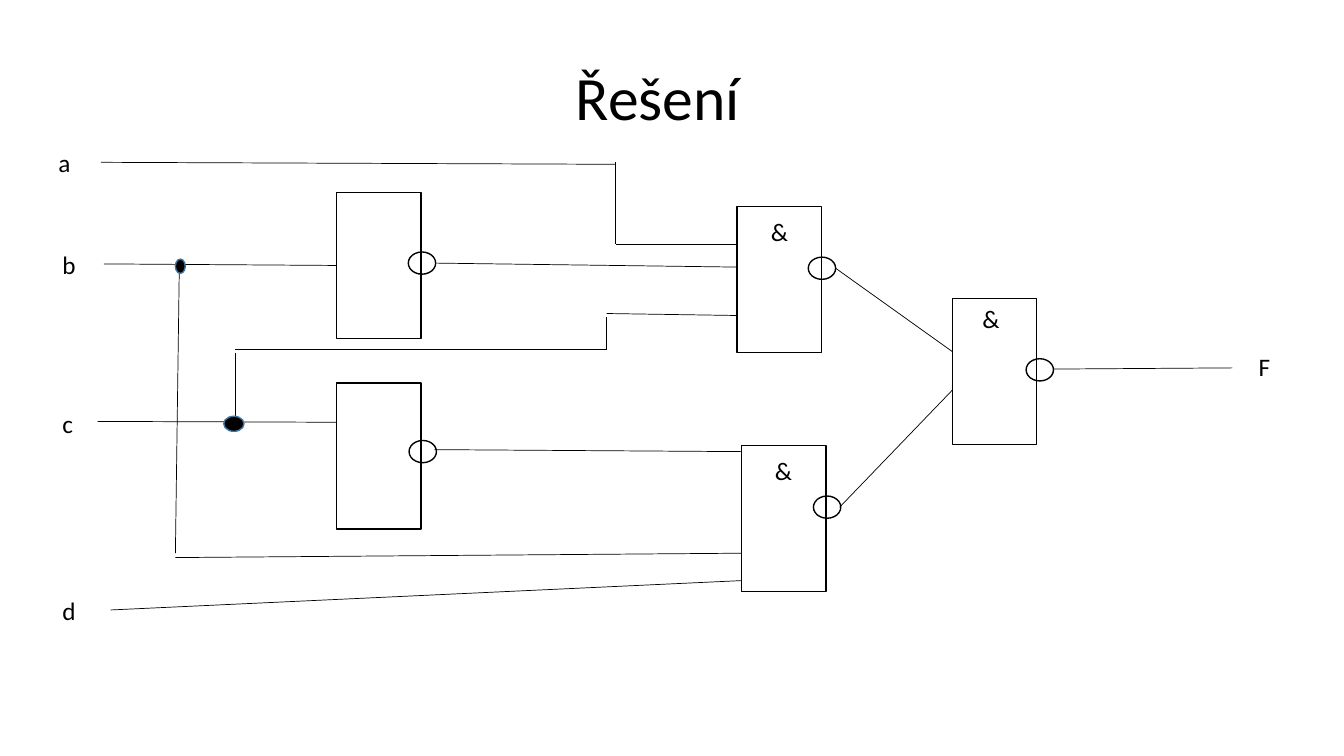
import pptx
import pptx.util
import pptx.dml.color
import pptx.enum.shapes
import pptx.enum.text
import pptx.oxml
import pptx.oxml.ns
from pptx.util import Cm

THEME = {
    "ink": pptx.dml.color.RGBColor(0x00, 0x00, 0x00),
    "dot_edge": pptx.dml.color.RGBColor(0x43, 0x73, 0x9E),
    "font": "Calibri",
    "title": pptx.util.Pt(44),
    "label": pptx.util.Pt(18),
    "outline": pptx.util.Pt(1),
    "wire": pptx.util.Pt(0.5),
}
SHAPES = pptx.enum.shapes.MSO_SHAPE
GATE_SIZE = (2.13, 3.68)
BUBBLE_SIZE = (0.69, 0.56)

deck = pptx.Presentation()
deck.slide_width, deck.slide_height = Cm(33.87), Cm(19.05)
slide = deck.slides.add_slide(deck.slide_layouts[5])


def write(frame, text, size, **paragraph_format):
    """Fill a text frame with one formatted paragraph."""
    frame.text = text
    paragraph = frame.paragraphs[0]
    for name, value in paragraph_format.items():
        setattr(paragraph, name, value)
    font = paragraph.runs[0].font
    for name, value in {"name": THEME["font"], "size": size}.items():
        setattr(font, name, value)
    font.color.rgb = THEME["ink"]


def outlined(kind, position, size, edge, fill=None):
    """Add a shape with a thin outline, hollow unless a fill is given."""
    shape = slide.shapes.add_shape(kind, *map(Cm, position + size))
    shape.shadow.inherit = False
    if fill is None:
        shape.fill.background()
    else:
        shape.fill.solid()
        shape.fill.fore_color.rgb = fill
    shape.line.color.rgb = edge
    shape.line.width = THEME["outline"]
    return shape


# Title
title = slide.shapes.title
title_box = {"left": Cm(1.98), "top": Cm(0.69), "width": Cm(29.21), "height": Cm(3.68)}
for name, value in title_box.items():
    setattr(title, name, value)
title.text_frame.vertical_anchor = pptx.enum.text.MSO_ANCHOR.MIDDLE
write(title.text_frame, "Řešení", THEME["title"],
      alignment=pptx.enum.text.PP_ALIGN.CENTER, line_spacing=0.9)

# Gates with their negation bubbles: body corner, bubble corner
gate_corners = {
    "and_top": ((18.57, 5.21), (20.37, 6.48)),
    "and_output": ((24.0, 7.52), (25.86, 9.04)),
    "and_bottom": ((18.69, 11.23), (20.5, 12.5)),
    "not_b": ((8.48, 4.85), (10.29, 6.35)),
    "not_c": ((8.48, 9.65), (10.31, 11.1)),
}
gates = {}
for name, (corner, bubble_corner) in gate_corners.items():
    gates[name] = outlined(SHAPES.RECTANGLE, corner, GATE_SIZE, THEME["ink"])
    outlined(SHAPES.OVAL, bubble_corner, BUBBLE_SIZE, THEME["ink"])

# Gate symbols and signal names
labels = [
    ("&", 19.18, 5.33, 0.97),
    ("&", 24.51, 7.52, 0.97),
    ("&", 19.28, 11.35, 0.97),
    ("a", 1.22, 3.58, 1.32),
    ("b", 1.32, 6.15, 1.32),
    ("c", 1.32, 10.16, 1.32),
    ("d", 1.32, 14.88, 1.32),
    ("F", 31.47, 8.74, 1.32),
]
for text, left, top, width in labels:
    label = slide.shapes.add_textbox(Cm(left), Cm(top), Cm(width), Cm(1.02))
    label.text_frame.word_wrap = True
    write(label.text_frame, text, THEME["label"])

# Wires: x and y of the start, x and y of the end, gate joined at its left middle
wires = [
    # a into the top AND
    (2.54, 4.09, 15.52, 4.14, None),
    (15.52, 4.09, 15.52, 6.15, None),
    (15.52, 6.15, 18.57, 6.15, None),
    # b into its inverter and the bottom AND
    (2.62, 6.65, 8.48, 6.69, "not_b"),
    (4.52, 6.71, 4.42, 13.94, None),
    (4.42, 14.05, 18.69, 13.94, None),
    # c into its inverter and the top AND
    (2.46, 10.62, 8.48, 10.64, None),
    (5.92, 8.89, 5.92, 10.57, None),
    (5.92, 8.81, 15.29, 8.81, None),
    (15.29, 8.81, 15.29, 7.98, None),
    (15.29, 7.9, 18.57, 7.95, None),
    # inverters into the ANDs
    (11.0, 6.63, 18.57, 6.73, None),
    (10.95, 11.33, 18.69, 11.38, None),
    # d into the bottom AND
    (2.79, 15.37, 18.69, 14.63, None),
    # ANDs into the output gate, then F
    (21.16, 12.78, 24.0, 9.83, None),
    (21.06, 6.76, 24.0, 8.86, None),
    (26.54, 9.3, 31.06, 9.27, None),
]
for *ends, joined_gate in wires:
    wire = slide.shapes.add_connector(
        pptx.enum.shapes.MSO_CONNECTOR.STRAIGHT, *map(Cm, ends))
    wire.line.color.rgb = THEME["ink"]
    wire.line.width = THEME["wire"]
    wire._element.spPr.append(
        pptx.oxml.parse_xml("<a:effectLst %s/>" % pptx.oxml.ns.nsdecls("a")))
    if joined_gate:
        wire.end_connect(gates[joined_gate], 1)

# Junction dots on b and c
for corner, size in [((4.42, 6.53), (0.25, 0.36)), ((5.64, 10.49), (0.51, 0.38))]:
    outlined(SHAPES.OVAL, corner, size, THEME["dot_edge"], THEME["ink"])

deck.save("out.pptx")
